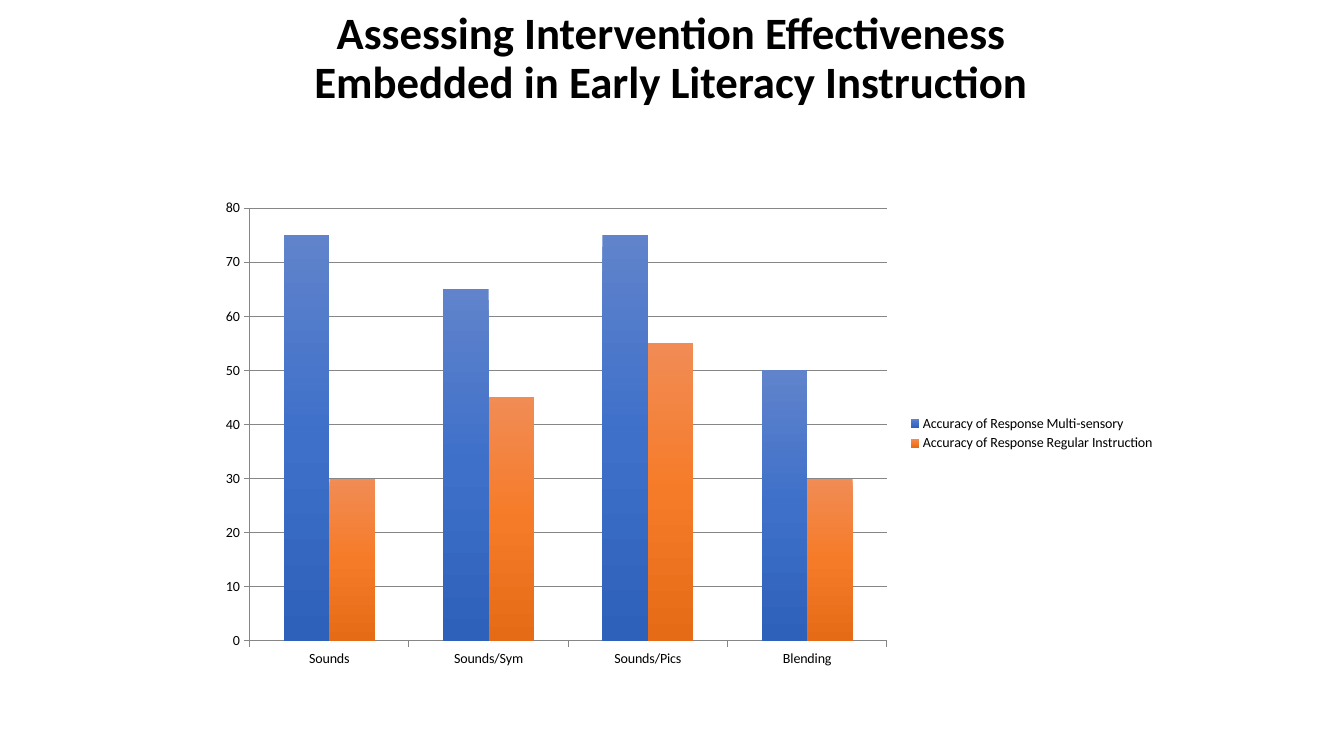
from copy import deepcopy

from pptx import Presentation
from pptx.chart.data import CategoryChartData
from pptx.dml.color import RGBColor
from pptx.enum.chart import XL_CHART_TYPE, XL_LEGEND_POSITION, XL_TICK_MARK
from pptx.enum.text import MSO_ANCHOR, MSO_AUTO_SIZE, PP_ALIGN
from pptx.util import Pt

CLUSTERED = XL_CHART_TYPE.COLUMN_CLUSTERED
LEGEND_RIGHT = XL_LEGEND_POSITION.RIGHT
TICK_OUT = XL_TICK_MARK.OUTSIDE
MIDDLE = MSO_ANCHOR.MIDDLE
NO_FIT = MSO_AUTO_SIZE.NONE
CENTER = PP_ALIGN.CENTER

FONT = "Calibri"
BLACK = RGBColor(0x00, 0x00, 0x00)
GRAY = RGBColor(0x86, 0x86, 0x86)
# Top, middle and bottom colour of each series
BLUES = (RGBColor(0x60, 0x83, 0xCB), RGBColor(0x3E, 0x70, 0xCA),
         RGBColor(0x2E, 0x61, 0xBA))
ORANGES = (RGBColor(0xF1, 0x8C, 0x55), RGBColor(0xF6, 0x7B, 0x28),
           RGBColor(0xE5, 0x6B, 0x17))

TITLE = ("Assessing Intervention Effectiveness\v"
         "Embedded in Early Literacy Instruction")
CATEGORIES = ("Sounds", "Sounds/Sym", "Sounds/Pics", "Blending")
SERIES = (
    ("Accuracy of Response Multi-sensory", (75, 65, 75, 50), BLUES),
    ("Accuracy of Response Regular Instruction", (30, 45, 55, 30), ORANGES),
)


def format_font(font, size, bold=False, color=BLACK):
    font.name = FONT
    font.size = Pt(size)
    font.bold = bold
    font.color.rgb = color


def write_text(tf, text, size, bold=False, color=BLACK, align=CENTER,
               spacing=0.9):
    tf.text = text
    p = tf.paragraphs[0]
    p.alignment = align
    p.line_spacing = spacing
    for r in p.runs:
        format_font(r.font, size, bold, color)


def add_title(s, left, top, width, height):
    sp = s.shapes.title
    sp.left, sp.top, sp.width, sp.height = map(Pt, (left, top, width, height))
    tf = sp.text_frame
    tf.word_wrap = True
    tf.auto_size = NO_FIT
    tf.vertical_anchor = MIDDLE
    write_text(tf, TITLE, size=32, bold=True)


def shade_columns(series, colors):
    fill = series.format.fill
    fill.gradient()
    fill.gradient_angle = 270
    # The default gradient has two stops; a third goes between them
    first = series._element.xpath(".//a:gsLst/a:gs")[0]
    first.addnext(deepcopy(first))
    for stop, position, color in zip(fill.gradient_stops, (0, 0.5, 1), colors):
        stop.position = position
        stop.color.rgb = color


def format_axis(axis):
    axis.major_tick_mark = TICK_OUT
    axis.format.line.color.rgb = GRAY
    axis.format.line.width = Pt(0.75)


def add_accuracy_chart(s, left, top, width, height):
    data = CategoryChartData()
    data.categories = CATEGORIES
    for name, values, _ in SERIES:
        data.add_series(name, values)
    chart = s.shapes.add_chart(CLUSTERED, Pt(left), Pt(top), Pt(width),
                               Pt(height), data).chart
    chart.has_title = False
    format_font(chart.font, 10)

    # Columns
    plot = chart.plots[0]
    plot.gap_width = 150
    plot.vary_by_categories = False
    for series, (_, _, colors) in zip(plot.series, SERIES):
        shade_columns(series, colors)

    # Axes and gridlines
    for axis in (chart.category_axis, chart.value_axis):
        format_axis(axis)
    value_axis = chart.value_axis
    value_axis.minimum_scale = 0
    value_axis.maximum_scale = 80
    value_axis.major_unit = 10
    value_axis.has_major_gridlines = True
    gridline = value_axis.major_gridlines.format.line
    gridline.color.rgb = GRAY
    gridline.width = Pt(0.75)

    # Legend
    chart.has_legend = True
    chart.legend.position = LEGEND_RIGHT
    chart.legend.include_in_layout = False


def main():
    prs = Presentation()
    prs.slide_width, prs.slide_height = Pt(960), Pt(540)
    s = prs.slides.add_slide(prs.slide_layouts[5])
    add_title(s, 169.2, 27.4, 620.6, 30.2)
    add_accuracy_chart(s, 147.6, 136.1, 684.7, 347)
    prs.save("out.pptx")


if __name__ == "__main__":
    main()
